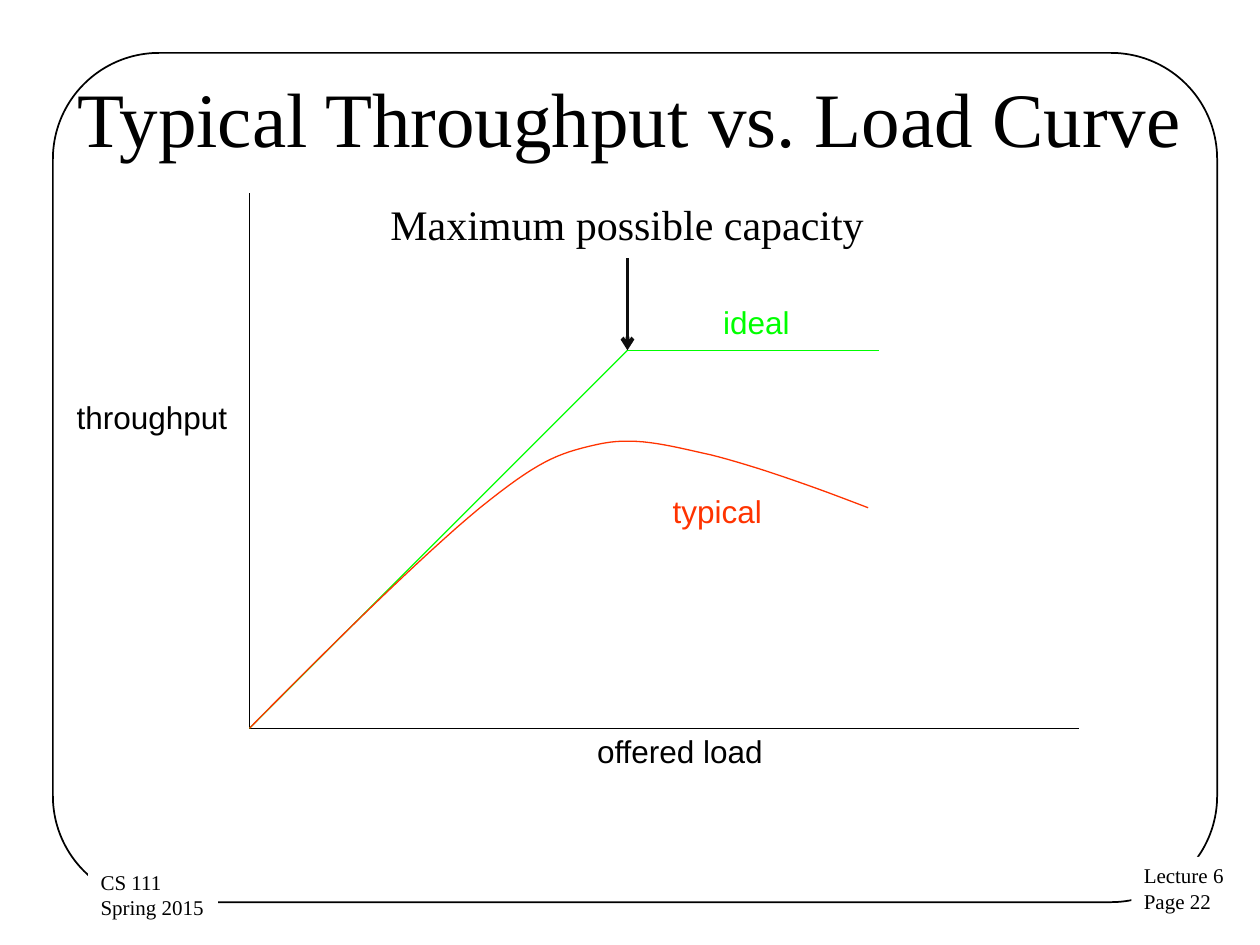
from dataclasses import dataclass

from lxml.etree import SubElement
from pptx import Presentation
from pptx.dml.color import RGBColor
from pptx.enum.shapes import MSO_CONNECTOR, MSO_SHAPE
from pptx.enum.text import MSO_ANCHOR, MSO_AUTO_SIZE, PP_ALIGN
from pptx.oxml.ns import qn
from pptx.util import Inches, Pt


@dataclass(frozen=True)
class Theme:
    """Colours, fonts, type sizes and line widths."""
    black: str = "000000"
    white: str = "FFFFFF"
    ideal: str = "00FF00"
    typical: str = "FF3300"
    arrow: str = "0D0D0D"
    serif: str = "Times New Roman"
    sans: str = "Arial"
    title: int = 44
    callout: int = 24
    label: int = 18
    footer: int = 12
    thin: float = 0.75
    frame: float = 1
    thick: float = 2.25


THEME = Theme()
ORIGIN = (1.98, 5.78)
AXIS_TOP = (1.98, 1.53)
AXIS_RIGHT = (8.56, 5.78)
CAPACITY = (4.98, 2.78)
IDEAL_END = (6.98, 2.78)
ARROW_START = (4.98, 2.05)
TYPICAL_CURVE = [
    ((2.66, 5.09), (3.35, 4.41), (3.81, 4.03)),
    ((4.27, 3.66), (4.42, 3.6), (4.73, 3.53)),
    ((5.03, 3.46), (5.28, 3.53), (5.64, 3.61)),
    ((6, 3.7), (6.45, 3.86), (6.89, 4.03)),
]
CURVE_STEPS = 16


def set_line(line, color, width):
    """Give a line its colour and width."""
    line.color.rgb = RGBColor.from_string(color)
    line.width = Pt(width)


def write_text(box, text, size, font, color, align=PP_ALIGN.LEFT):
    """Fill a box with text in a single format."""
    frame = box.text_frame
    frame.text = text
    for para in frame.paragraphs:
        para.alignment = align
        for span in para.runs:
            span.font.size = Pt(size)
            span.font.name = font
            span.font.color.rgb = RGBColor.from_string(color)


def fit_to_text(box):
    """Let a box grow around its unwrapped text."""
    box.text_frame.word_wrap = False
    box.text_frame.auto_size = MSO_AUTO_SIZE.SHAPE_TO_FIT_TEXT
    box.text_frame.vertical_anchor = MSO_ANCHOR.TOP


def add_frame(page):
    """Draw the rounded border of the page."""
    border = page.shapes.add_shape(MSO_SHAPE.ROUNDED_RECTANGLE, Inches(0.42),
                                   Inches(0.42), Inches(9.24), Inches(6.74))
    border.adjustments[0] = 0.125
    border.shadow.inherit = False
    border.fill.background()
    set_line(border.line, THEME.black, THEME.frame)


def add_footer(page, left, top, width, text):
    """Add a white footer block that interrupts the border."""
    box = page.shapes.add_shape(MSO_SHAPE.RECTANGLE, Inches(left), Inches(top),
                                Inches(width), Inches(0.51))
    box.shadow.inherit = False
    box.fill.solid()
    box.fill.fore_color.rgb = RGBColor.from_string(THEME.white)
    box.line.fill.background()
    write_text(box, text, THEME.footer, THEME.serif, THEME.black)
    fit_to_text(box)


def add_title(page, text):
    """Add the centred title."""
    box = page.shapes.add_textbox(Inches(0.5), Inches(0.3), Inches(9), Inches(1.25))
    write_text(box, text, THEME.title, THEME.serif, THEME.black, PP_ALIGN.CENTER)
    box.text_frame.word_wrap = True
    box.text_frame.vertical_anchor = MSO_ANCHOR.MIDDLE


def add_label(page, left, top, width, text, color=THEME.black, size=THEME.label,
              font=THEME.sans, height=0.43, align=PP_ALIGN.LEFT):
    """Add a one-line label to the diagram."""
    box = page.shapes.add_textbox(Inches(left), Inches(top), Inches(width), Inches(height))
    write_text(box, text, size, font, color, align)
    fit_to_text(box)


def add_line(page, start, end, color, width=THEME.thin, arrow=False):
    """Draw a straight line, with an arrowhead at its end if asked."""
    line = page.shapes.add_connector(MSO_CONNECTOR.STRAIGHT,
                                     *map(Inches, start + end))
    set_line(line.line, color, width)
    if arrow:
        SubElement(line.line._get_or_add_ln(), qn("a:tailEnd"), type="arrow")
    SubElement(line._element.spPr, qn("a:effectLst"))


def bezier_point(points, t):
    """Return the point at t on a cubic curve."""
    weights = ((1 - t) ** 3, 3 * t * (1 - t) ** 2, 3 * t ** 2 * (1 - t), t ** 3)
    return tuple(sum(w * point[axis] for w, point in zip(weights, points))
                 for axis in (0, 1))


def add_curve(page, start, segments, color):
    """Draw an open outline through a chain of cubic segments."""
    vertices = []
    knot = start
    for segment in segments:
        vertices += [bezier_point((knot, *segment), step / CURVE_STEPS)
                     for step in range(1, CURVE_STEPS + 1)]
        knot = segment[-1]
    builder = page.shapes.build_freeform(*map(Inches, start))
    builder.add_line_segments([(Inches(x), Inches(y)) for x, y in vertices], close=False)
    curve = builder.convert_to_shape()
    curve.shadow.inherit = False
    curve.fill.background()
    set_line(curve.line, color, THEME.thin)


def main():
    """Build the slide and save it."""
    deck = Presentation()
    deck.slide_width, deck.slide_height = Inches(10), Inches(7.5)
    page = deck.slides.add_slide(deck.slide_layouts[6])

    add_frame(page)
    add_footer(page, 8.98, 6.8, 0.84, "Lecture 6\nPage 22")
    add_footer(page, 0.7, 6.85, 1.03, "CS 111\nSpring 2015")
    add_title(page, "Typical Throughput vs. Load Curve")

    for end in (AXIS_TOP, AXIS_RIGHT):
        add_line(page, ORIGIN, end, THEME.black)
    add_label(page, 0.44, 3.11, 1.6, "throughput ", align=PP_ALIGN.CENTER)
    add_label(page, 4.64, 5.76, 1.67, "offered load")

    for start, end in ((ORIGIN, CAPACITY), (CAPACITY, IDEAL_END)):
        add_line(page, start, end, THEME.ideal)
    add_label(page, 5.64, 2.36, 0.79, "ideal", THEME.ideal)
    add_curve(page, ORIGIN, TYPICAL_CURVE, THEME.typical)
    add_label(page, 5.24, 3.86, 0.99, "typical", THEME.typical)

    add_line(page, ARROW_START, CAPACITY, THEME.arrow, THEME.thick, arrow=True)
    add_label(page, 3, 1.53, 4, "Maximum possible capacity", size=THEME.callout,
              font=THEME.serif, height=0.5)
    deck.save("out.pptx")


if __name__ == "__main__":
    main()
